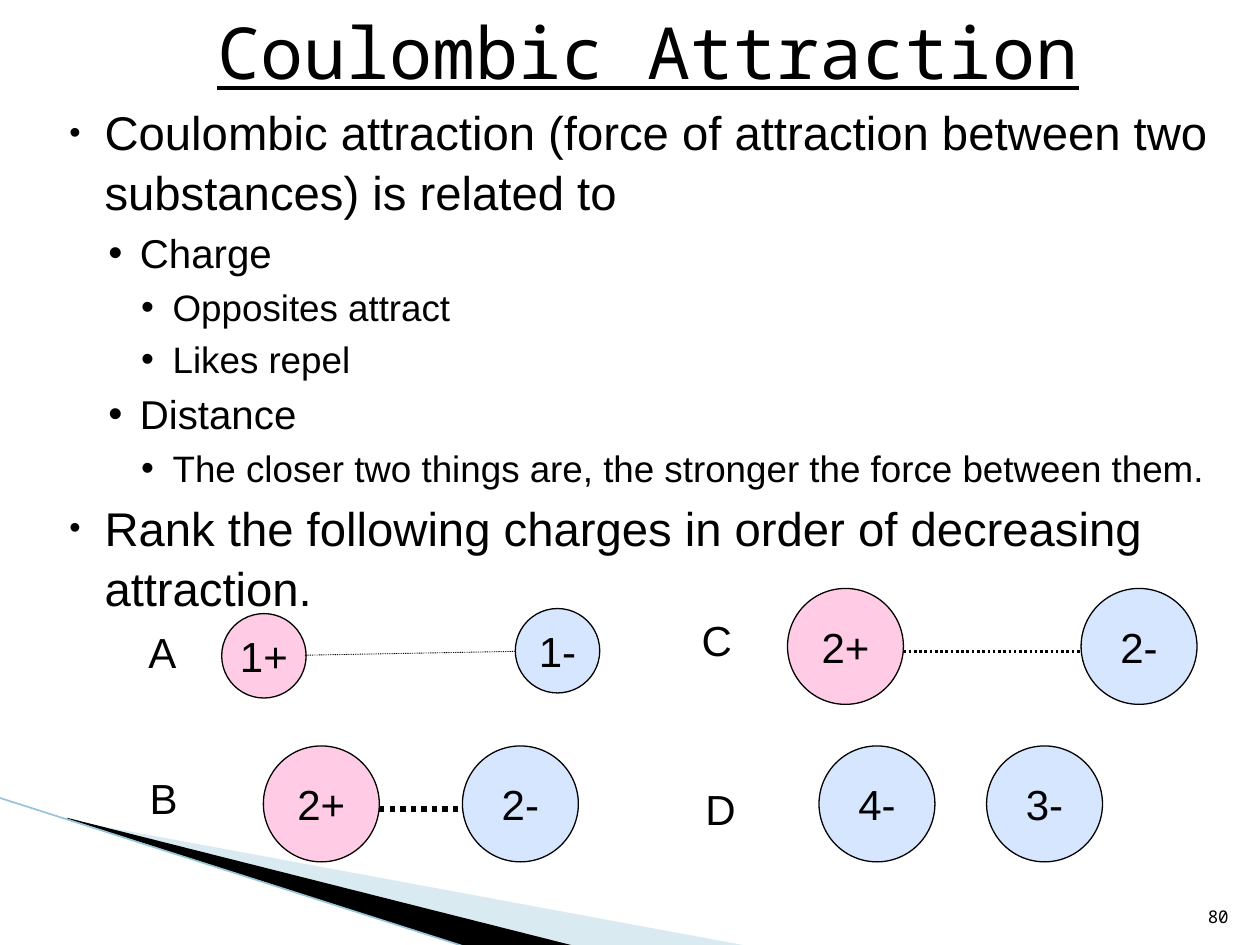
from lxml import etree
from pptx import Presentation
from pptx.dml.color import RGBColor
from pptx.enum.dml import MSO_LINE
from pptx.enum.shapes import MSO_CONNECTOR, MSO_SHAPE
from pptx.enum.text import MSO_ANCHOR, MSO_AUTO_SIZE, PP_ALIGN
from pptx.oxml.ns import qn
from pptx.util import Inches, Pt

BLACK = RGBColor(0x00, 0x00, 0x00)
PINK = RGBColor(0xFF, 0x99, 0xCC)
BLUE = RGBColor(0xAF, 0xCF, 0xFF)
PALE_TEAL = RGBColor(0xA0, 0xCB, 0xDC)
LINE_TEAL = RGBColor(0x97, 0xC5, 0xD8)

DOTTED = MSO_LINE.ROUND_DOT
STRAIGHT = MSO_CONNECTOR.STRAIGHT
ELLIPSE = MSO_SHAPE.OVAL
LEFT, CENTER, RIGHT = PP_ALIGN.LEFT, PP_ALIGN.CENTER, PP_ALIGN.RIGHT
TOP, MIDDLE, BOTTOM = MSO_ANCHOR.TOP, MSO_ANCHOR.MIDDLE, MSO_ANCHOR.BOTTOM
NO_FIT = MSO_AUTO_SIZE.NONE

BODY_FONT = "Arial"
MONO_FONT = "Noto Sans Mono"

# Per outline level: text size, space before, left margin, hanging indent, bullet %
LEVELS = [
    (27, 4, 0.4, 0.28, 68),
    (23, 3.2, 0.68, 0.25, 100),
    (21, 3.5, 0.94, 0.25, 100),
]

OUTLINE = [
    (0, "Coulombic attraction (force of attraction between two substances) is related to"),
    (1, "Charge"),
    (2, "Opposites attract"),
    (2, "Likes repel"),
    (1, "Distance"),
    (2, "The closer two things are, the stronger the force between them."),
    (0, "Rank the following charges in order of decreasing attraction."),
]

# Each half: charges (text, left, top, diameter), bonds (from, to, width), labels
HALVES = [
    (
        [("1+", 1.76, 4.87, 0.67), ("1-", 4.09, 4.83, 0.67),
         ("2+", 2.09, 5.92, 0.92), ("2-", 3.67, 5.92, 0.92)],
        [((2.42, 5.2), (4.09, 5.17), 0.5), ((3.01, 6.42), (3.67, 6.42), 3)],
        [("A", 1.08, 4.92), ("B", 1.09, 6.08)],
    ),
    (
        [("4-", 6.5, 5.92, 0.92), ("3-", 7.83, 5.92, 0.92),
         ("2+", 6.25, 4.67, 0.92), ("2-", 8.58, 4.67, 0.92)],
        [((7.17, 5.17), (8.58, 5.17), 1.5)],
        [("C", 5.47, 4.83), ("D", 5.5, 6.17)],
    ),
]


class SlideBuilder:
    def __init__(self, slide):
        self.slide = slide
        self.shapes = slide.shapes

    def start_group(self):
        self.shapes = self.slide.shapes.add_group_shape().shapes

    def format_font(self, font, color=BLACK, **values):
        for name, value in values.items():
            setattr(font, name, value)
        font.color.rgb = color

    def set_text(self, shape, text, align, anchor, wrap, **values):
        frame = shape.text_frame
        frame.text = text
        frame.word_wrap = wrap
        frame.auto_size = NO_FIT
        frame.vertical_anchor = anchor
        paragraph = frame.paragraphs[0]
        paragraph.alignment = align
        self.format_font(paragraph.runs[0].font, **values)

    def place(self, shape, left, top, width, height):
        box = {"left": left, "top": top, "width": width, "height": height}
        for name, value in box.items():
            setattr(shape, name, Inches(value))

    def fill(self, shape, color, opacity=100):
        shape.shadow.inherit = False
        shape.fill.solid()
        shape.fill.fore_color.rgb = color
        if opacity < 100:
            color_element = shape._element.spPr.find(qn("a:solidFill"))[0]
            etree.SubElement(color_element, qn("a:alpha"), val=str(opacity * 1000))

    def title(self, text, *box):
        title = self.slide.shapes.title
        self.place(title, *box)
        self.set_text(title, text, CENTER, MIDDLE, True,
                      size=Pt(41), name=MONO_FONT, underline=True)

    def outline(self, items, *box):
        body = self.slide.placeholders[1]
        self.place(body, *box)
        frame = body.text_frame
        frame.auto_size = NO_FIT
        frame.vertical_anchor = TOP
        frame.margin_right = Inches(0.05)
        for index, (level, text) in enumerate(items):
            paragraph = frame.add_paragraph() if index else frame.paragraphs[0]
            paragraph.level = level
            size, before, margin, hanging, bullet_percent = LEVELS[level]
            properties = paragraph._p.get_or_add_pPr()
            properties.set("marL", str(Inches(margin)))
            properties.set("indent", str(-Inches(hanging)))
            etree.SubElement(properties, qn("a:buSzPct"), val=str(bullet_percent * 1000))
            etree.SubElement(properties, qn("a:buFont"), typeface=BODY_FONT)
            etree.SubElement(properties, qn("a:buChar"), char="•")
            paragraph.space_before = Pt(before if index else 0)
            paragraph.line_spacing = 1.05
            run = paragraph.add_run()
            run.text = text
            self.format_font(run.font, size=Pt(size), name=BODY_FONT)

    def band(self, points, color, opacity=100):
        start, *rest = [(Inches(x), Inches(y)) for x, y in points]
        builder = self.shapes.build_freeform(*start)
        builder.add_line_segments(rest, close=True)
        shape = builder.convert_to_shape()
        self.fill(shape, color, opacity)
        shape.line.fill.background()

    def line(self, start, end, color, width, dash=None):
        ends = [Inches(value) for value in (*start, *end)]
        connector = self.shapes.add_connector(STRAIGHT, *ends)
        connector.line.color.rgb = color
        connector.line.width = Pt(width)
        if dash:
            connector.line.dash_style = dash
        etree.SubElement(connector._element.spPr, qn("a:effectLst"))

    def charge(self, text, left, top, diameter):
        box = [Inches(value) for value in (left, top, diameter, diameter)]
        circle = self.shapes.add_shape(ELLIPSE, *box)
        self.fill(circle, PINK if text.endswith("+") else BLUE, 50)
        circle.line.color.rgb = BLACK
        circle.line.width = Pt(0.75)
        self.set_text(circle, text, CENTER, MIDDLE, False, size=Pt(24), name=BODY_FONT)

    def label(self, text, left, top, width=0.44, height=0.5, align=LEFT,
              anchor=TOP, wrap=False, size=24, font=BODY_FONT):
        box = [Inches(value) for value in (left, top, width, height)]
        self.set_text(self.shapes.add_textbox(*box), text, align, anchor, wrap,
                      size=Pt(size), name=font)


def main():
    presentation = Presentation()
    presentation.slide_width = Inches(10)
    presentation.slide_height = Inches(7.5)
    builder = SlideBuilder(presentation.slides.add_slide(presentation.slide_layouts[1]))

    # Corner decoration
    builder.band([(0.55, 6.51), (5.95, 7.51), (4.56, 7.51), (0.55, 6.5)], PALE_TEAL, 40)
    builder.band([(0.53, 6.49), (4.57, 7.51), (3.72, 7.52), (0.54, 6.5)], BLACK)
    builder.line((-0.01, 6.33), (3.71, 7.52), LINE_TEAL, 0.95)

    # Title and outline
    builder.outline(OUTLINE, 0.33, 0.75, 9.36, 5.62)
    builder.title("Coulombic Attraction", 0.42, 0, 9.45, 0.8)

    # Slide number
    builder.label("80", 9.33, 7.01, 0.52, 0.4, RIGHT, BOTTOM, True, 10, MONO_FONT)

    # Charge pairs, one group for each half
    for charges, bonds, labels in HALVES:
        builder.start_group()
        for charge in charges:
            builder.charge(*charge)
        for start, end, width in bonds:
            builder.line(start, end, BLACK, width, DOTTED)
        for label in labels:
            builder.label(*label)

    presentation.save("out.pptx")


if __name__ == "__main__":
    main()
